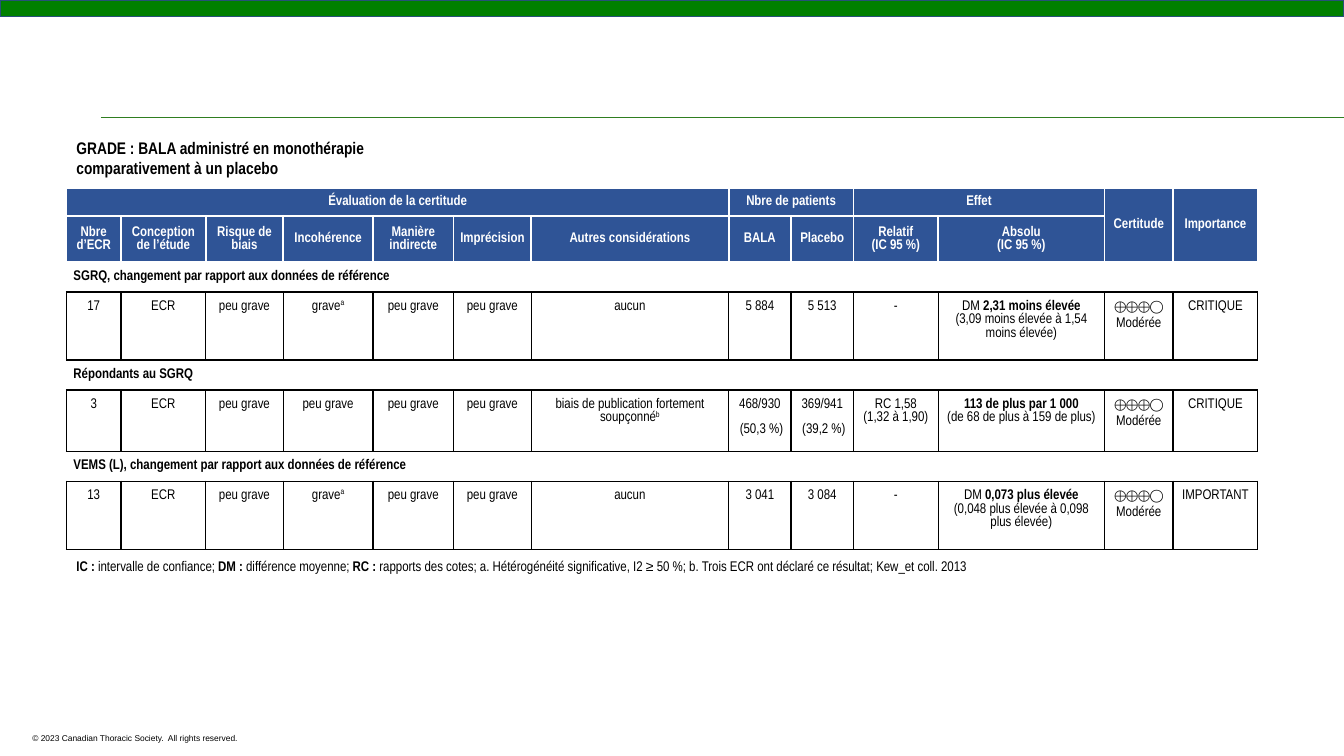
from copy import deepcopy

from lxml.etree import SubElement
from pptx import Presentation
from pptx.dml.color import RGBColor
from pptx.enum.shapes import MSO_CONNECTOR as CONNECTOR, MSO_SHAPE as SHAPE
from pptx.enum.text import MSO_ANCHOR as ANCHOR, MSO_AUTO_SIZE as AUTO_SIZE, PP_ALIGN as ALIGN
from pptx.oxml import parse_xml
from pptx.oxml.ns import nsdecls, qn
from pptx.util import Pt

BLACK = RGBColor(0x00, 0x00, 0x00)
WHITE = RGBColor(0xFF, 0xFF, 0xFF)
HEADER_BLUE = RGBColor(0x2F, 0x54, 0x96)
BAR_GREEN = RGBColor(0x00, 0x80, 0x00)
BAR_EDGE = RGBColor(0x26, 0x51, 0x78)
RULE_GREEN = RGBColor(0x2F, 0x7E, 0x20)
NARROW = "Arial Narrow"

SLIDE_WIDTH, SLIDE_HEIGHT = 960, 540
COLUMN_WIDTHS = [38.9, 60.5, 55.4, 64.1, 57.6, 55.4, 141.1, 44.6, 44.6, 60.5, 118.8, 49, 60.5]
HEADER_HEIGHTS = [20.2, 33]
OUTCOME_HEIGHT = 21.2

# First column, last column, last row, label
HEADER_GROUPS = [
    (0, 6, 0, "Évaluation de la certitude"),
    (7, 8, 0, "Nbre de patients"),
    (9, 10, 0, "Effet"),
    (11, 11, 1, "Certitude"),
    (12, 12, 1, "Importance"),
]
HEADERS = ["Nbre d’ECR", "Conception de l’étude", "Risque de biais", "Incohérence",
           "Manière indirecte", "Imprécision", "Autres considérations", "BALA", "Placebo",
           "Relatif\n(IC 95 %)", "Absolu\n(IC 95 %)"]

# A cell is a list of paragraphs, a paragraph a list of (text, style) runs
MINOR = [[("peu grave", "")]]
SERIOUS = [[("grave", ""), ("a", "super")]]
NONE = [[("aucun", "")]]
MODERATE = [[("⨁⨁⨁◯\n", "symbol"), ("Modérée", "")]]


def plain(*paragraphs):
    return [[(text, "")] for text in paragraphs]


def study(count, inconsistency, other, bala, placebo, relative, absolute, importance):
    return [plain(count), plain("ECR"), MINOR, inconsistency, MINOR, MINOR, other, bala,
            placebo, plain(relative), [absolute], MODERATE, plain(importance)]


# Outcome, height of its study row, study row
OUTCOMES = [
    ("SGRQ, changement par rapport aux données de référence", 48.5,
     study("17", SERIOUS, NONE, plain("5 884"), plain("5 513"), "-",
           [("DM ", ""), ("2,31 moins élevée\n", "bold"),
            ("(3,09 moins élevée à 1,54 moins élevée)", "")], "CRITIQUE")),
    ("Répondants au SGRQ", 43,
     study("3", MINOR,
           [[("biais de publication fortement soupçonné", ""), ("b", "super")]],
           plain("468/930", " (50,3 %)"), plain("369/941", " (39,2 %)"),
           "RC 1,58\n(1,32 à 1,90)",
           [("113 de plus par 1 000\n", "bold"), ("(de 68 de plus à 159 de plus)", "")],
           "CRITIQUE")),
    ("VEMS (L), changement par rapport aux données de référence", 48.5,
     study("13", SERIOUS, NONE, plain("3 041"), plain("3 084"), "-",
           [("DM ", ""), ("0,073 plus élevée\n", "bold"),
            ("(0,048 plus élevée à 0,098 plus élevée)", "")], "IMPORTANT")),
]

LEGEND = [
    ("IC :", "bold"), (" intervalle de confiance; ", ""),
    ("DM :", "bold"), (" différence moyenne; ", ""),
    ("RC :", "bold"),
    (" rapports des cotes; a. Hétérogénéité significative, I2 ≥ 50 %; "
     "b. Trois ECR ont déclaré ce résultat; Kew_et coll. 2013", ""),
]


def add_runs(paragraph, runs, size=10, color=BLACK, font=NARROW):
    for text, style in runs:
        for index, line in enumerate(text.split("\n")):
            if index:
                paragraph.add_line_break()
                paragraph._p[-1].append(deepcopy(run._r.rPr))
            if not line:
                continue
            run = paragraph.add_run()
            run.text = line
            run.font.size = Pt(size)
            run.font.name = "Cambria" if style == "symbol" else font
            run.font.bold = style == "bold"
            run.font.color.rgb = color
            if style == "super":
                run._r.rPr.set("baseline", "30000")


def set_borders(cell, left, right, top, bottom):
    """Each side is a (colour, width) pair, or None for no line."""
    properties = cell._tc.get_or_add_tcPr()
    for index, (side, border) in enumerate(zip("LRTB", (left, right, top, bottom))):
        if border:
            color, width = border
            line = (f'<a:ln{side} {nsdecls("a")} w="{Pt(width)}"><a:solidFill>'
                    f'<a:srgbClr val="{color}"/></a:solidFill></a:ln{side}>')
        else:
            line = f'<a:ln{side} {nsdecls("a")} w="0"><a:noFill/></a:ln{side}>'
        properties.insert(index, parse_xml(line))


def style_cell(cell, fill, borders, margins, anchor):
    cell.fill.solid()
    cell.fill.fore_color.rgb = fill
    set_borders(cell, *borders)
    cell.margin_left, cell.margin_top, cell.margin_right, cell.margin_bottom = map(Pt, margins)
    cell.vertical_anchor = anchor


def write_cell(cell, paragraphs, color=BLACK, align=ALIGN.CENTER):
    frame = cell.text_frame
    for index, runs in enumerate(paragraphs):
        paragraph = frame.add_paragraph() if index else frame.paragraphs[0]
        paragraph.alignment = align
        paragraph.line_spacing = 1.07
        paragraph.space_after = Pt(8)
        add_runs(paragraph, runs, color=color)


def fill_header(table):
    white_line = (WHITE, 1.5)
    for row in range(2):
        for column in range(len(COLUMN_WIDTHS)):
            style_cell(table.cell(row, column), HEADER_BLUE, [white_line] * 4,
                       [3.6] * 4, ANCHOR.MIDDLE)
    for first, last, last_row, label in HEADER_GROUPS:
        table.cell(0, first).merge(table.cell(last_row, last))
        write_cell(table.cell(0, first), [[(label, "bold")]], WHITE)
    for column, label in enumerate(HEADERS):
        write_cell(table.cell(1, column), [[(label, "bold")]], WHITE)


def fill_outcome(table, row, outcome, cells):
    black_line = (BLACK, 1)
    top = (WHITE, 1.5) if row == 2 else black_line
    for column, content in enumerate(cells):
        style_cell(table.cell(row, column), WHITE, [None, None, top, black_line],
                   [5, 3.6, 5, 5], ANCHOR.MIDDLE)
        study_cell = table.cell(row + 1, column)
        style_cell(study_cell, WHITE, [black_line] * 4, [5] * 4, ANCHOR.TOP)
        write_cell(study_cell, content)
    table.cell(row, 0).merge(table.cell(row, len(cells) - 1))
    write_cell(table.cell(row, 0), [[(outcome, "bold")]], align=ALIGN.LEFT)


def add_grade_table(slide, left, top):
    heights = list(HEADER_HEIGHTS)
    for _, study_height, _ in OUTCOMES:
        heights += [OUTCOME_HEIGHT, study_height]
    table = slide.shapes.add_table(len(heights), len(COLUMN_WIDTHS), Pt(left), Pt(top),
                                   Pt(sum(COLUMN_WIDTHS)), Pt(sum(heights))).table
    for column, width in zip(table.columns, COLUMN_WIDTHS):
        column.width = Pt(width)
    for row, height in zip(table.rows, heights):
        row.height = Pt(height)
    fill_header(table)
    for index, (outcome, _, cells) in enumerate(OUTCOMES):
        fill_outcome(table, 2 + 2 * index, outcome, cells)


def add_text(slide, left, top, width, height, runs, size, font=NARROW, anchor=ANCHOR.TOP):
    frame = slide.shapes.add_textbox(Pt(left), Pt(top), Pt(width), Pt(height)).text_frame
    frame.word_wrap = True
    frame.auto_size = AUTO_SIZE.SHAPE_TO_FIT_TEXT
    frame.vertical_anchor = anchor
    add_runs(frame.paragraphs[0], runs, size, font=font)


def add_page_frame(slide, width):
    bar = slide.shapes.add_shape(SHAPE.RECTANGLE, 0, 0, Pt(width), Pt(12))
    bar.shadow.inherit = False
    bar.fill.solid()
    bar.fill.fore_color.rgb = BAR_GREEN
    bar.line.color.rgb = BAR_EDGE
    bar.line.width = Pt(0.75)
    rule = slide.shapes.add_connector(CONNECTOR.STRAIGHT, Pt(72), Pt(84), Pt(width), Pt(84))
    rule.line.color.rgb = RULE_GREEN
    rule.line.width = Pt(1)
    SubElement(rule._element.spPr, qn("a:effectLst"))
    add_text(slide, 16, 520, 228, 14.4,
             [("© 2023 Canadian Thoracic Society.  All rights reserved.", "")], 6, "Arial")


def main():
    presentation = Presentation()
    presentation.slide_width, presentation.slide_height = Pt(SLIDE_WIDTH), Pt(SLIDE_HEIGHT)
    slide = presentation.slides.add_slide(presentation.slide_layouts[6])
    add_page_frame(slide, SLIDE_WIDTH)
    add_grade_table(slide, 47.5, 134)
    add_text(slide, 47.5, 102, 254, 21.8,
             [("GRADE : BALA administré en monothérapie comparativement à un placebo", "bold")],
             12, anchor=ANCHOR.MIDDLE)
    add_text(slide, 47.5, 394.5, 660, 19.4, LEGEND, 10)
    presentation.save("out.pptx")


if __name__ == "__main__":
    main()
